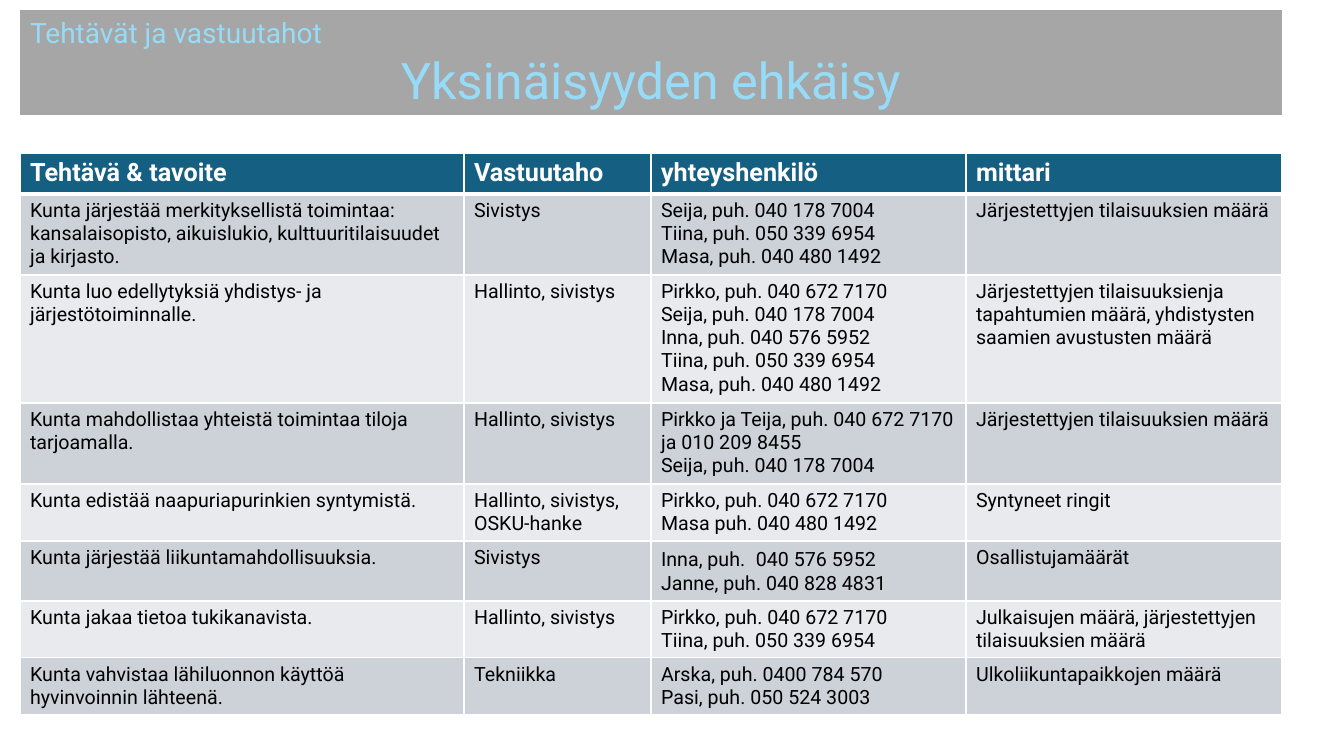
"""Builds the slide on tasks and responsible parties for preventing loneliness."""
from lxml.etree import SubElement
from pptx import Presentation
from pptx.dml.color import RGBColor
from pptx.enum.text import MSO_ANCHOR as ANCHOR, MSO_AUTO_SIZE as AUTO, PP_ALIGN as ALIGN
from pptx.oxml.ns import qn
from pptx.util import Pt

PX = 12192000 / 1344
FONT = "Roboto"
GREY = RGBColor(0xA6, 0xA6, 0xA6)
SKY = RGBColor(0x96, 0xDC, 0xF8)
TEAL = RGBColor(0x15, 0x60, 0x82)
DARK_BAND = RGBColor(0xCC, 0xD2, 0xD8)
LIGHT_BAND = RGBColor(0xE8, 0xEA, 0xED)
WHITE = RGBColor(0xFF, 0xFF, 0xFF)
BLACK = RGBColor(0, 0, 0)

LEFT, WIDTH = 20, 1262
COL_WIDTHS = [444, 187, 315, 316]
ROW_HEIGHTS = [41, 81, 128, 81, 57, 60, 57, 57]
ROWS = [
    ("Tehtävä & tavoite", "Vastuutaho", "yhteyshenkilö", "mittari"),
    ("Kunta järjestää merkityksellistä toimintaa: kansalaisopisto, aikuislukio, "
     "kulttuuritilaisuudet ja kirjasto.",
     "Sivistys",
     "Seija, puh. 040 178 7004\nTiina, puh. 050 339 6954\nMasa, puh. 040 480 1492",
     "Järjestettyjen tilaisuuksien määrä"),
    ("Kunta luo edellytyksiä yhdistys- ja järjestötoiminnalle.",
     "Hallinto, sivistys",
     "Pirkko, puh. 040 672 7170\nSeija, puh. 040 178 7004\nInna, puh. 040 576 5952\n"
     "Tiina, puh. 050 339 6954\nMasa, puh. 040 480 1492",
     "Järjestettyjen tilaisuuksienja tapahtumien määrä, yhdistysten saamien "
     "avustusten määrä"),
    ("Kunta mahdollistaa yhteistä toimintaa tiloja tarjoamalla.",
     "Hallinto, sivistys",
     "Pirkko ja Teija, puh. 040 672 7170 ja 010 209 8455\nSeija, puh. 040 178 7004",
     "Järjestettyjen tilaisuuksien määrä"),
    ("Kunta edistää naapuriapurinkien syntymistä.",
     "Hallinto, sivistys, OSKU-hanke",
     "Pirkko, puh. 040 672 7170\nMasa puh. 040 480 1492",
     "Syntyneet ringit"),
    ("Kunta järjestää liikuntamahdollisuuksia.",
     "Sivistys",
     "Inna, puh. | |040 576 5952\nJanne, puh. 040 828 4831",
     "Osallistujamäärät"),
    ("Kunta jakaa tietoa tukikanavista.",
     "Hallinto, sivistys",
     "Pirkko, puh. 040 672 7170\nTiina, puh. 050 339 6954",
     "Julkaisujen määrä, järjestettyjen tilaisuuksien määrä"),
    ("Kunta vahvistaa lähiluonnon käyttöä hyvinvoinnin lähteenä.",
     "Tekniikka",
     "Arska, puh. 0400 784 570\nPasi, puh. 050 524 3003",
     "Ulkoliikuntapaikkojen määrä"),
]


def px(n):
    return round(n * PX)


def add_run(p, text, size, color, bold=False):
    r = p.add_run()
    r.text = text
    r.font.name, r.font.size, r.font.bold = FONT, Pt(size), bold
    r.font.color.rgb = color


prs = Presentation()
prs.slide_width, prs.slide_height = px(1344), px(756)
s = prs.slides.add_slide(prs.slide_layouts[5])

title = s.shapes.title
title.left, title.top, title.width, title.height = px(LEFT), px(10), px(WIDTH), px(105)
title.fill.solid()
title.fill.fore_color.rgb = GREY
tf = title.text_frame
tf.auto_size, tf.word_wrap, tf.vertical_anchor = AUTO.NONE, True, ANCHOR.TOP
p = tf.paragraphs[0]
p.alignment = ALIGN.LEFT
add_run(p, "Tehtävät ja vastuutahot", 20, SKY)
p = tf.add_paragraph()
p.alignment = ALIGN.CENTER
add_run(p, "Yksinäisyyden ehkäisy", 36, SKY)

table = s.shapes.add_table(len(ROWS), len(COL_WIDTHS), px(LEFT), px(153),
                           px(WIDTH), px(sum(ROW_HEIGHTS))).table
for col, width in zip(table.columns, COL_WIDTHS):
    col.width = px(width)
for i, (row, height) in enumerate(zip(ROWS, ROW_HEIGHTS)):
    table.rows[i].height = px(height)
    header = i == 0
    fill = TEAL if header else DARK_BAND if i % 2 else LIGHT_BAND
    size, color = (18, WHITE) if header else (14, BLACK)
    for j, text in enumerate(row):
        cell = table.cell(i, j)
        tcPr = cell._tc.get_or_add_tcPr()
        for side in ("lnL", "lnR", "lnT", "lnB"):
            thick = (i, side) in ((0, "lnB"), (1, "lnT"))
            ln = SubElement(tcPr, qn(f"a:{side}"), w=str(Pt(3 if thick else 1)))
            SubElement(SubElement(ln, qn("a:solidFill")), qn("a:srgbClr"), val=str(WHITE))
        cell.fill.solid()
        cell.fill.fore_color.rgb = fill
        for k, line in enumerate(text.split("\n")):
            p = cell.text_frame.add_paragraph() if k else cell.text_frame.paragraphs[0]
            for part in line.split("|"):
                add_run(p, part, 16 if part.isspace() else size, color, header)

prs.save("out.pptx")
